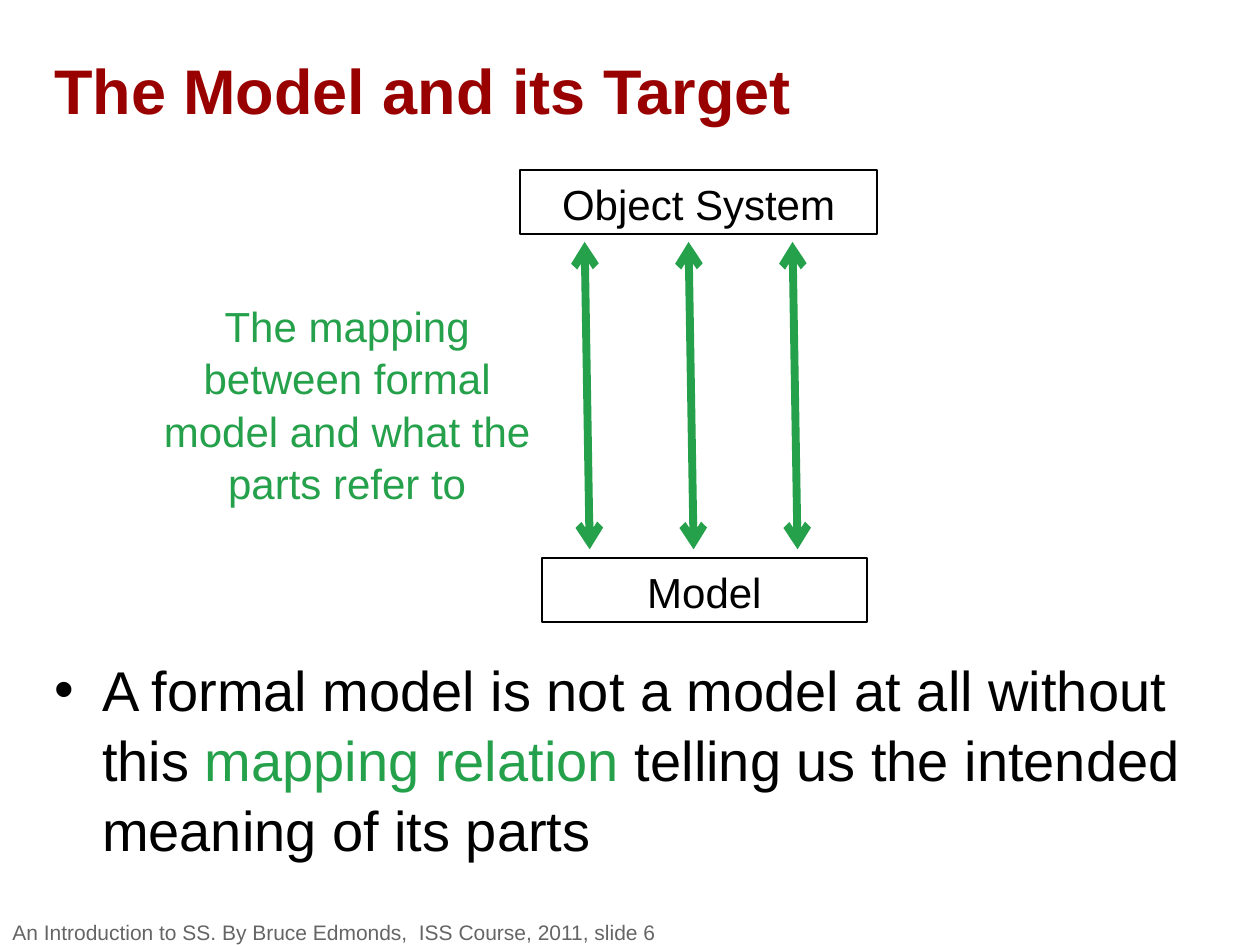
from pptx import Presentation
from pptx.dml.color import RGBColor
from pptx.enum import shapes, text
from pptx.oxml import parse_xml
from pptx.oxml.ns import nsdecls
from pptx.util import Inches, Pt

# Content
GREEN, BLACK, RED, GREY = "25A14B", "000000", "990000", "656565"
TITLE = "The Model and its Target"
POINT = [
    ("A formal model is not a model at all without this ", BLACK),
    ("mapping relation", GREEN),
    (" telling us the intended meaning of its parts", BLACK),
]
BOXES = [
    ("Object System", (4.13, 1.35, 2.83, 0.51)),
    ("Model", (4.3, 4.43, 2.58, 0.51)),
]
NOTE = "The mapping between formal model and what the parts refer to"
FOOTER = "An Introduction to SS. By Bruce Edmonds,  ISS Course, 2011, slide 6"
ARROWS, LEFT, STEP, SLANT = 3, 4.64, 0.825, 0.04
TOP, END = 1.92, 4.36


def color(code):
    return RGBColor.from_string(code)


def xml(tag, attrs=""):
    return parse_xml(f"<a:{tag} {nsdecls('a')} {attrs}/>")


def place(shape, spot):
    shape.left, shape.top, shape.width, shape.height = map(Inches, spot)


def write(shape, runs, size, ink=BLACK, bold=False, align="LEFT",
          anchor="TOP", bullet=False, spacing=1.04):
    frame = shape.text_frame
    frame.word_wrap = True
    frame.auto_size = text.MSO_AUTO_SIZE.NONE
    frame.vertical_anchor = getattr(text.MSO_ANCHOR, anchor)
    para = frame.paragraphs[0]
    para.alignment = getattr(text.PP_ALIGN, align)
    para.line_spacing = spacing
    para.space_before = Pt(0)
    if bullet:
        props = para._p.get_or_add_pPr()
        props.set("marL", str(Inches(0.38)))
        props.set("indent", str(-Inches(0.38)))
        props.append(xml("buFont", 'typeface="Arial"'))
        props.append(xml("buChar", 'char="•"'))
    if isinstance(runs, str):
        runs = [(runs, ink)]
    for words, shade in runs:
        run = para.add_run()
        run.text = words
        font = run.font
        font.name, font.size, font.bold = "Arial", Pt(size), bold
        font.color.rgb = color(shade)


def arrow(slide, start, end):
    line = slide.shapes.add_connector(
        shapes.MSO_CONNECTOR.STRAIGHT, *map(Inches, start + end))
    line.line.color.rgb = color(GREEN)
    line.line.width = Pt(4.5)
    for tip in ("headEnd", "tailEnd"):
        line.line._get_or_add_ln().append(xml(tip, 'type="arrow"'))
    line._element.spPr.append(xml("effectLst"))


def main():
    deck = Presentation()
    deck.slide_width, deck.slide_height = Inches(10), Inches(7.5)
    slide = deck.slides.add_slide(deck.slide_layouts[1])

    # Title and point
    title, body = slide.placeholders
    place(title, (0.33, 0.25, 8.42, 0.92))
    write(title, TITLE, 36, RED, bold=True, anchor="MIDDLE", spacing=1)
    place(body, (0.33, 5.13, 9.25, 1.85))
    write(body, POINT, 32, bullet=True)

    # Object system and model
    for label, spot in BOXES:
        box = slide.shapes.add_shape(
            shapes.MSO_SHAPE.RECTANGLE, *map(Inches, spot))
        box.shadow.inherit = False
        box.fill.background()
        box.line.color.rgb = color(BLACK)
        box.line.width = Pt(1)
        write(box, label, 24, align="CENTER")

    # Mapping arrows
    for i in range(ARROWS):
        x = LEFT + i * STEP
        arrow(slide, (x, TOP), (x + SLANT, END))

    # Mapping note and footer
    note = slide.shapes.add_textbox(*map(Inches, (1.18, 2.32, 3.15, 1.72)))
    write(note, NOTE, 24, GREEN, align="CENTER")
    footer = slide.shapes.add_textbox(*map(Inches, (0, 7.29, 10, 0.21)))
    write(footer, FOOTER, 12, GREY, anchor="MIDDLE", spacing=1)

    deck.save("out.pptx")


if __name__ == "__main__":
    main()
